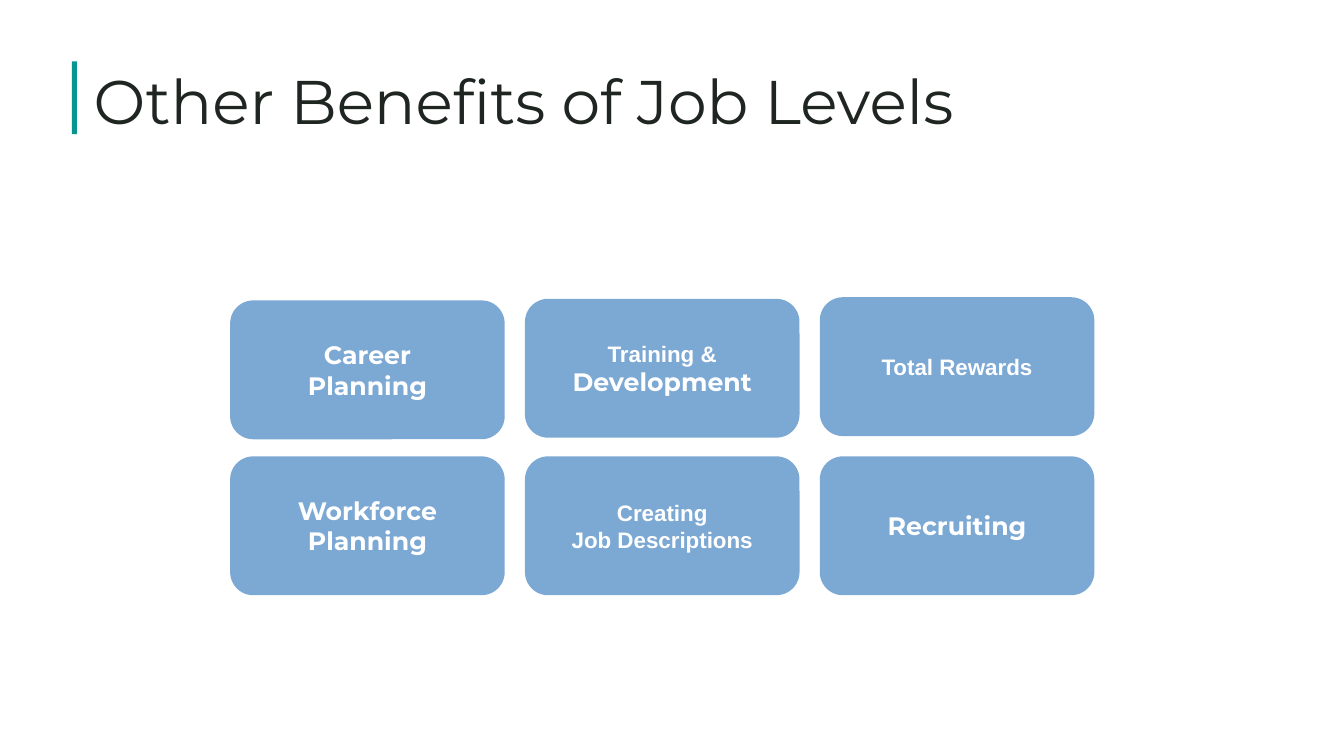
from pptx import Presentation
from pptx.dml.color import RGBColor
from pptx.enum.shapes import MSO_SHAPE
from pptx.enum.text import MSO_ANCHOR, MSO_AUTO_SIZE, PP_ALIGN
from pptx.util import Cm, Pt

COLORS = {"teal": "079591", "ink": "1F2621", "blue": "7CA8D4", "white": "FFFFFF"}
HEAD = ("Montserrat", 18)
BODY = ("Arial", 16)


def color(name):
    return RGBColor.from_string(COLORS[name])


def add_box(kind, left, top, width, height, fill):
    box = slide.shapes.add_shape(kind, Cm(left), Cm(top), Cm(width), Cm(height))
    box.shadow.inherit = False
    box.fill.solid()
    box.fill.fore_color.rgb = color(fill)
    box.line.fill.background()
    return box


deck = Presentation()
deck.slide_width, deck.slide_height = Cm(33.87), Cm(19.05)
slide = deck.slides.add_slide(deck.slide_layouts[5])

# Title with accent bar
add_box(MSO_SHAPE.RECTANGLE, 1.81, 1.55, 0.13, 1.83, "teal")
title = slide.shapes.title
title.left, title.top, title.width, title.height = Cm(2.18), Cm(1.83), Cm(29.21), Cm(1.37)
frame = title.text_frame
frame.text = "Other Benefits of Job Levels"
frame.auto_size = MSO_AUTO_SIZE.NONE
frame.vertical_anchor = MSO_ANCHOR.MIDDLE
frame.margin_left = Cm(0.18)
frame.margin_top = frame.margin_bottom = 0
para = frame.paragraphs[0]
para.alignment = PP_ALIGN.LEFT
para.font.name, para.font.size = "Montserrat", Pt(44)
para.font.color.rgb = color("ink")

# Benefit cards: each line of text with its font
rows = [
    [
        [("Career", HEAD), ("Planning", HEAD)],
        [("Training &", BODY), ("Development", HEAD)],
        [("Total Rewards", BODY)],
    ],
    [
        [("Workforce", HEAD), ("Planning", HEAD)],
        [("Creating", BODY), ("Job Descriptions", BODY)],
        [("Recruiting", HEAD)],
    ],
]
# Top of each row, and its rise from one column to the next
tops = [(7.57, 0.04), (11.5, 0)]

for cards, (top, rise) in zip(rows, tops):
    for col, lines in enumerate(cards):
        card = add_box(MSO_SHAPE.ROUNDED_RECTANGLE, 5.8 + 7.43 * col,
                       top - rise * col, 6.92, 3.5, "blue")
        frame = card.text_frame
        frame.word_wrap = False
        frame.vertical_anchor = MSO_ANCHOR.MIDDLE
        frame.text = "\n".join(text for text, style in lines)
        for para, (text, (font, size)) in zip(frame.paragraphs, lines):
            para.alignment = PP_ALIGN.CENTER
            para.font.name, para.font.size = font, Pt(size)
            para.font.bold = True
            para.font.color.rgb = color("white")

deck.save("out.pptx")
